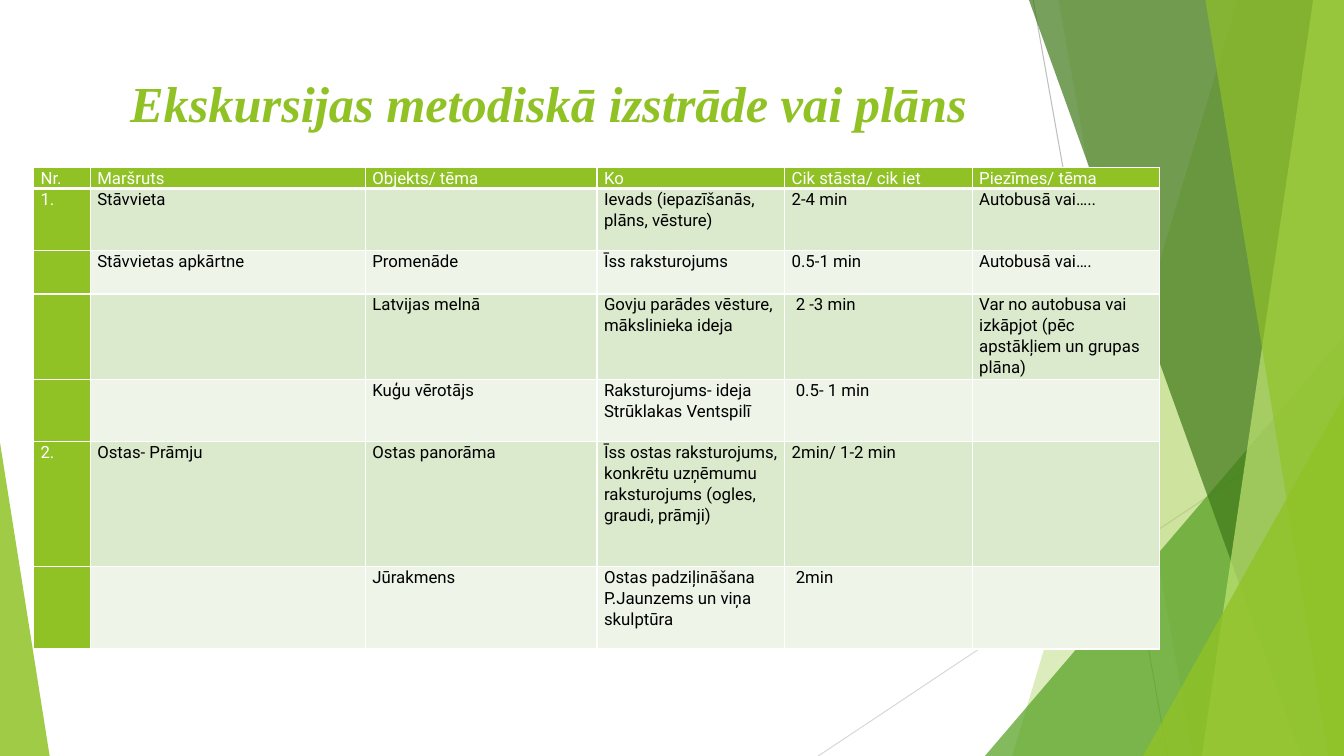
from lxml import etree
from pptx import Presentation, util as u
from pptx.dml.color import RGBColor
from pptx.enum import shapes, text
from pptx.oxml import ns

Pt = u.Pt
W, H = 960, 540
COLOURS = {
    "white": "FFFFFF", "black": "000000", "lime": "90C226", "green": "54A021",
    "forest": "3F7819", "pale": "C0E474", "band_dark": "DBE9CD",
    "band_light": "EEF4E8", "line_dark": "BFBFBF", "line_light": "D9D9D9",
}


def rgb(name):
    return RGBColor.from_string(COLOURS[name])


def paint(sp, colour, opacity):
    """Fill a facet with a see-through colour, without outline or shadow."""
    sp.shadow.inherit = False
    sp.line.fill.background()
    sp.fill.solid()
    sp.fill.fore_color.rgb = rgb(colour)
    clr = sp.fill._xPr.find(".//" + ns.qn("a:srgbClr"))
    etree.SubElement(clr, ns.qn("a:alpha"), val=str(opacity * 1000))


prs = Presentation()
prs.slide_width, prs.slide_height = Pt(W), Pt(H)
s = prs.slides.add_slide(prs.slide_layouts[5])

# Thin lines behind the facets
for x1, y1, x2, y2, colour in [(738, 0, 834, H, "line_dark"),
                               (W, 290, 584.5, H, "line_light")]:
    line = s.shapes.add_connector(shapes.MSO_CONNECTOR.STRAIGHT,
                                  Pt(x1), Pt(y1), Pt(x2), Pt(y2))
    line.line.color.rgb = rgb(colour)
    line.line.width = Pt(0.75)
    etree.SubElement(line._element.spPr, ns.qn("a:effectLst"))

# Bands run down the right edge (top x, bottom x);
# triangles stand on the bottom edge (left, top, width, apex)
facets = [
    ("band", (884, 723), "lime", 30),
    ("band", (756, 852), "lime", 20),
    ("triangle", (703.5, 240, 256.5, 1), "green", 72),
    ("band", (735, 929.5), "forest", 70),
    ("band", (938, 858.5), "pale", 70),
    ("band", (861, 949), "lime", 65),
    ("triangle", (816.5, 283, 143.5, 1), "lime", 80),
    ("triangle", (0, 316, 35.5, 0), "lime", 85),
]
for kind, place, colour, opacity in facets:
    if kind == "band":
        top_x, bottom_x = place
        builder = s.shapes.build_freeform(Pt(top_x), 0)
        builder.add_line_segments([(Pt(W), 0), (Pt(W), Pt(H)), (Pt(bottom_x), Pt(H))])
        sp = builder.convert_to_shape()
    else:
        left, top, width, apex = place
        sp = s.shapes.add_shape(shapes.MSO_SHAPE.ISOSCELES_TRIANGLE,
                                Pt(left), Pt(top), Pt(width), Pt(H - top))
        sp.adjustments[0] = apex
    paint(sp, colour, opacity)

# Title, in front of the facets
title = s.shapes.title
s.shapes._spTree.append(title._element)
title.left, title.top, title.width, title.height = Pt(53.5), Pt(48), Pt(677), Pt(90)
tf = title.text_frame
tf.text = "Ekskursijas metodiskā izstrāde vai plāns"
tf.vertical_anchor = text.MSO_ANCHOR.TOP
p = tf.paragraphs[0]
p.alignment = text.PP_ALIGN.CENTER
p.font.name, p.font.size = "Times New Roman", Pt(36)
p.font.bold = p.font.italic = True
p.font.color.rgb = rgb("lime")

# Plan table
rows = [
    ["Nr.", "Maršruts", "Objekts/ tēma", "Ko", "Cik stāsta/ cik iet", "Piezīmes/ tēma"],
    ["1.", "Stāvvieta", "", "Ievads (iepazīšanās, plāns, vēsture)", "2-4 min",
     "Autobusā vai….."],
    ["", "Stāvvietas apkārtne", "Promenāde", "Īss raksturojums", "0.5-1 min",
     "Autobusā vai…."],
    ["", "", "Latvijas melnā", "Govju parādes vēsture, mākslinieka ideja", " 2 -3 min",
     "Var no autobusa vai izkāpjot (pēc apstākļiem un grupas plāna)"],
    ["", "", "Kuģu vērotājs", "Raksturojums- ideja Strūklakas Ventspilī",
     " 0.5- 1 min", ""],
    ["2.", "Ostas- Prāmju", "Ostas panorāma",
     "Īss ostas raksturojums, konkrētu uzņēmumu raksturojums (ogles, graudi, prāmji)",
     "2min/ 1-2 min", ""],
    ["", "", "Jūrakmens", "Ostas padziļināšana\nP.Jaunzems un viņa skulptūra",
     " 2min", ""],
]
widths = [40.5, 196.5, 165.5, 134, 134, 134]
heights = [15.25, 44.5, 30.75, 61.25, 44.5, 89, 59]
tbl = s.shapes.add_table(len(rows), len(widths), Pt(24), Pt(119.5),
                         Pt(sum(widths)), Pt(sum(heights))).table
tbl.first_row = tbl.horz_banding = False
for col, width in zip(tbl.columns, widths):
    col.width = Pt(width)
for row, height in zip(tbl.rows, heights):
    row.height = Pt(height)

for i, row in enumerate(rows):
    for j, words in enumerate(row):
        cell = tbl.cell(i, j)
        heading = i == 0 or j == 0
        cell.margin_left = cell.margin_right = Pt(5)
        cell.margin_top = cell.margin_bottom = 0
        cell.fill.solid()
        cell.fill.fore_color.rgb = rgb(
            "lime" if heading else "band_dark" if i % 2 else "band_light")
        cell.text_frame.text = words
        for p in cell.text_frame.paragraphs:
            p.line_spacing = 1.07
            p.font.size = Pt(12)
            for r in p.runs:
                r.font.name, r.font.size = "Roboto", Pt(12)
                r.font.color.rgb = rgb("white" if heading else "black")
        tcPr = cell._tc.get_or_add_tcPr()
        for k, side in enumerate(["lnL", "lnR", "lnT", "lnB"]):
            weight = 3 if i == 0 and side == "lnB" else 1
            ln = etree.Element(ns.qn("a:" + side), w=str(Pt(weight)))
            fill = etree.SubElement(ln, ns.qn("a:solidFill"))
            etree.SubElement(fill, ns.qn("a:srgbClr"), val=COLOURS["white"])
            tcPr.insert(k, ln)

prs.save("out.pptx")
